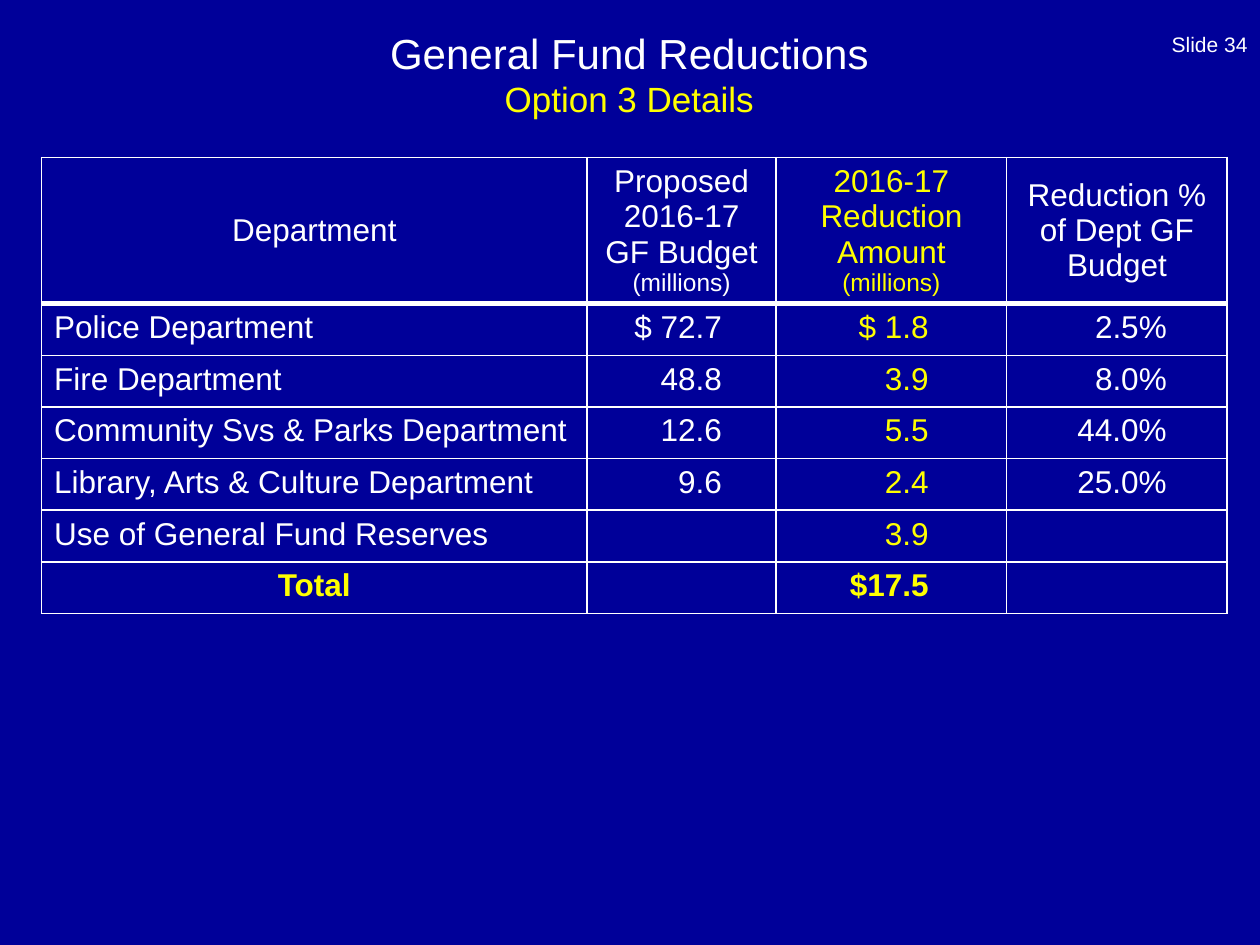
from typing import NamedTuple

from lxml.etree import SubElement as Sub
from pptx import Presentation
from pptx.dml.color import RGBColor as Rgb
from pptx.enum.text import MSO_ANCHOR as Anchor, PP_ALIGN as Align
from pptx.oxml.ns import qn
from pptx.util import Inches, Pt

NAVY, WHITE, GOLD = "000099", "FFFFFF", "FFFF00"
HEAD, ROW = 1.16, 0.41


class Run(NamedTuple):
    text: str
    size: int = 18
    hue: str = WHITE


class Col(NamedTuple):
    width: float
    hue: str
    align: Align
    inset: float
    head: list[list[Run]]


COLS = [
    Col(4.33, WHITE, Align.LEFT, 0.1, [[Run("Department")]]),
    Col(1.5, WHITE, Align.RIGHT, 0.43,
        [[Run("Proposed")], [Run("2016-17 GF Budget "), Run("(millions)", 14)]]),
    Col(1.83, GOLD, Align.RIGHT, 0.62,
        [[Run("2016-17 Reduction Amount ", hue=GOLD), Run("(millions)", 14, GOLD)]]),
    Col(1.75, WHITE, Align.RIGHT, 0.48, [[Run("Reduction % of Dept GF Budget")]]),
]
ROWS = [
    ("Police Department", "$ 72.7", "$ 1.8", "2.5%"),
    ("Fire Department", "48.8", "3.9", "8.0%"),
    ("Community Svs & Parks Department", "12.6", "5.5", "44.0%"),
    ("Library, Arts & Culture Department", "9.6", "2.4", "25.0%"),
    ("Use of General Fund Reserves", "", "3.9", ""),
    ("Total", "", "$17.5", ""),
]


def tint(code: str) -> Rgb:
    return Rgb.from_string(code)


def style(font, size: int, hue: str, bold: bool = False) -> None:
    font.name, font.size, font.bold = "Arial", Pt(size), bold
    font.color.rgb = tint(hue)


def write(frame, paras: list[list[Run]], align: Align, bold: bool = False) -> None:
    for i, runs in enumerate(paras):
        para = frame.paragraphs[0] if i == 0 else frame.add_paragraph()
        para.alignment = align
        style(para.font, runs[0].size, runs[0].hue, bold)
        for item in runs:
            run = para.add_run()
            run.text = item.text
            if item[1:] != runs[0][1:]:
                style(run.font, item.size, item.hue, bold)


def edge(cell, top: int, base: int) -> None:
    props = cell._tc.get_or_add_tcPr()
    for i, (side, wide) in enumerate(zip("LRTB", (1, 1, top, base))):
        line = Sub(props, qn(f"a:ln{side}"), w=str(Pt(wide)))
        fill = Sub(line, qn("a:solidFill"))
        Sub(fill, qn("a:srgbClr"), val=WHITE)
        props.insert(i, line)


def build() -> None:
    deck = Presentation()
    deck.slide_width, deck.slide_height = Inches(10), Inches(7.5)
    slide = deck.slides.add_slide(deck.slide_layouts[5])
    back = slide.background.fill
    back.solid()
    back.fore_color.rgb = tint(NAVY)

    title = slide.shapes.title
    title.left, title.top = Inches(0.33), Inches(0.17)
    title.width, title.height = Inches(9.33), Inches(0.83)
    frame = title.text_frame
    frame.vertical_anchor = Anchor.MIDDLE
    write(frame, [[Run("General Fund Reductions", 24)],
                  [Run("Option 3 Details", 20, GOLD)]], Align.CENTER)

    wide = sum(col.width for col in COLS)
    high = HEAD + ROW * len(ROWS)
    grid = slide.shapes.add_table(len(ROWS) + 1, len(COLS), Inches(0.33),
                                  Inches(1.25), Inches(wide), Inches(high)).table
    grid.first_row = grid.horz_banding = False
    for r, row in enumerate(grid.rows):
        row.height = Inches(ROW if r else HEAD)
    for c, col in enumerate(COLS):
        grid.columns[c].width = Inches(col.width)
        for r in range(len(ROWS) + 1):
            cell = grid.cell(r, c)
            cell.fill.background()
            edge(cell, 3 if r == 1 else 1, 1 if r else 3)
            if r == 0:
                cell.vertical_anchor = Anchor.MIDDLE
                write(cell.text_frame, col.head, Align.CENTER)
                continue
            last = r == len(ROWS)
            cell.margin_right = Inches(col.inset)
            write(cell.text_frame,
                  [[Run(ROWS[r - 1][c], hue=GOLD if last else col.hue)]],
                  Align.CENTER if last and c == 0 else col.align, last)

    box = slide.shapes.add_textbox(Inches(7.67), 0, Inches(2.33), Inches(0.5))
    frame = box.text_frame
    frame.word_wrap = True
    frame.vertical_anchor = Anchor.BOTTOM
    write(frame, [[Run("Slide 34", 12)]], Align.RIGHT)
    deck.save("out.pptx")


if __name__ == "__main__":
    build()
